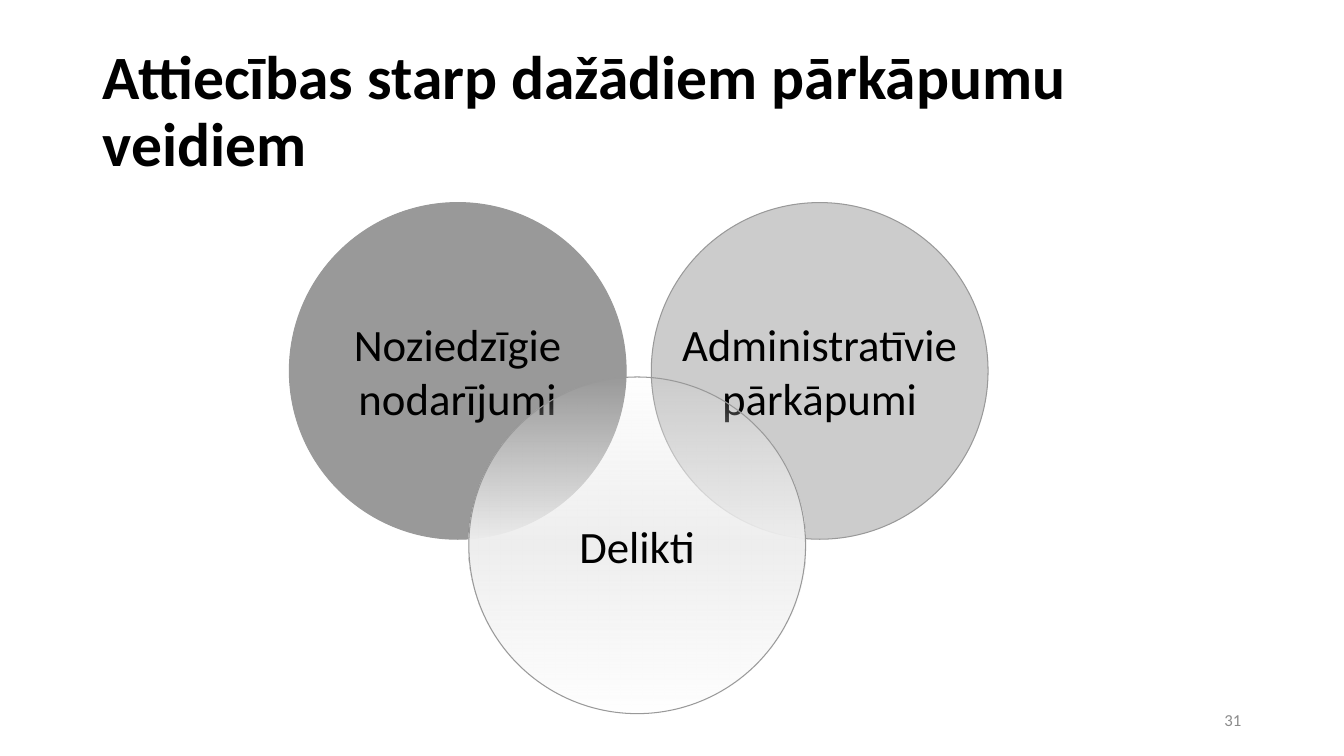
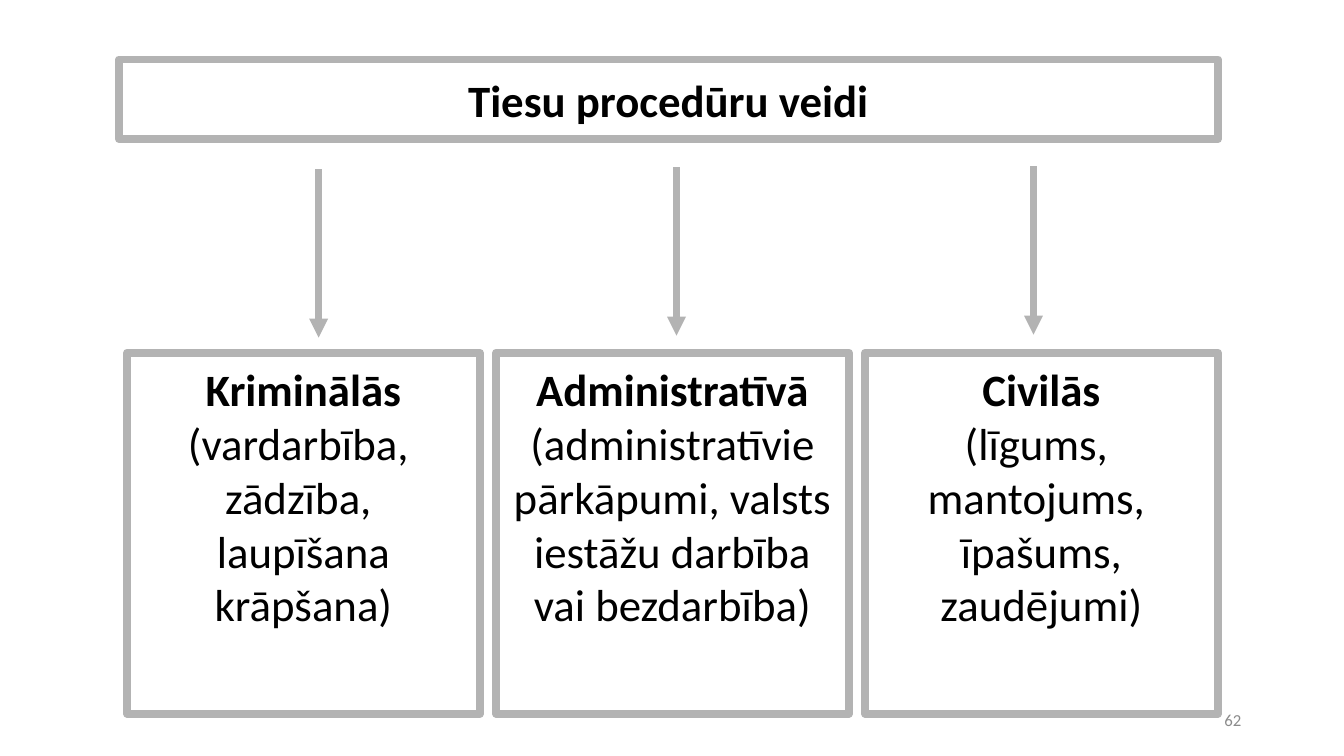
"""Builds two slides on kinds of offences and kinds of court procedure."""
from lxml.etree import SubElement
from pptx import Presentation
from pptx.dml.color import RGBColor
from pptx.enum.shapes import MSO_CONNECTOR as CONNECTOR, MSO_SHAPE as SHAPE
from pptx.enum.text import MSO_ANCHOR as ANCHOR, PP_ALIGN as ALIGN
from pptx.oxml.ns import qn
from pptx.util import Inches, Pt

BLACK, WHITE, NUMBER_GREY = "000000", "FFFFFF", "8B8B8B"
CIRCLE_EDGE, FRAME_GREY, GLOW = "999999", "B3B3B3", "EEEEEE"


def color(code):
    return RGBColor.from_string(code)


def write(shape, lines, size=32, ink=BLACK, bold_lines=0, align=ALIGN.CENTER,
          anchor=ANCHOR.MIDDLE, wrap=False, inset=(0.1, 0.05), spacing=None):
    frame = shape.text_frame
    side, top = map(Inches, inset)
    layout = {"word_wrap": wrap, "vertical_anchor": anchor, "margin_left": side,
              "margin_right": side, "margin_top": top, "margin_bottom": top}
    for key, value in layout.items():
        setattr(frame, key, value)
    for index, line in enumerate(lines):
        paragraph = frame.add_paragraph() if index else frame.paragraphs[0]
        paragraph.alignment = align
        paragraph.line_spacing = spacing
        run = paragraph.add_run()
        run.text = line
        style = {"name": "Calibri", "size": Pt(size), "bold": index < bold_lines}
        for key, value in style.items():
            setattr(run.font, key, value)
        run.font.color.rgb = color(ink)


deck = Presentation()
deck.slide_width, deck.slide_height = Inches(13.33), Inches(7.5)
offences, procedures = [deck.slides.add_slide(deck.slide_layouts[6]) for _ in range(2)]

for slide, page in ((offences, "31"), (procedures, "62")):
    slide.background.fill.solid()
    slide.background.fill.fore_color.rgb = color(WHITE)
    number = slide.shapes.add_textbox(Inches(9.42), Inches(6.95), Inches(2.99), Inches(0.39))
    write(number, [page], size=12, ink=NUMBER_GREY, align=ALIGN.RIGHT, wrap=True)

title = offences.shapes.add_textbox(Inches(0.92), Inches(0.4), Inches(11.49), Inches(1.44))
write(title, ["Attiecības starp dažādiem pārkāpumu veidiem"], size=44, bold_lines=1,
      align=ALIGN.LEFT, wrap=True, spacing=0.9)

circles = [
    (2.87, 2.01, "999999", ["Noziedzīgie", "nodarījumi"]),
    (6.46, 2.01, "CCCCCC", ["Administratīvie", "pārkāpumi"]),
    (4.65, 3.74, None, ["Delikti"]),
]
for left, top, tint, lines in circles:
    circle = offences.shapes.add_shape(SHAPE.OVAL, Inches(left), Inches(top),
                                       Inches(3.34), Inches(3.34))
    circle.shadow.inherit = False
    circle.line.color.rgb = color(CIRCLE_EDGE)
    circle.line.width = 0
    if tint:
        circle.fill.solid()
        circle.fill.fore_color.rgb = color(tint)
    else:
        circle.fill.gradient()
        circle.fill.gradient_angle = 270
        stops = circle._element.spPr.find(qn("a:gradFill")).find(qn("a:gsLst"))
        for stop in list(stops):
            stops.remove(stop)
        for position, alpha in ((0, 0), (50, 100), (100, 0)):
            stop = SubElement(stops, qn("a:gs"), pos=str(position * 1000))
            glow = SubElement(stop, qn("a:srgbClr"), val=GLOW)
            SubElement(glow, qn("a:alpha"), val=str(alpha * 1000))
    write(circle, lines)

kinds = [
    ["Kriminālās", "(vardarbība, ", "zādzība, ", "laupīšana", "krāpšana)"],
    ["Administratīvā", "(administratīvie", "pārkāpumi, valsts", "iestāžu darbība",
     "vai bezdarbība)"],
    ["Civilās", "(līgums, ", "mantojums, ", "īpašums,", "zaudējumi)"],
]
frames = [(1.18, 0.59, 10.9, 0.79, ANCHOR.MIDDLE, ["Tiesu procedūru veidi"])]
frames += [(1.26 + 3.66 * column, 3.5, 3.5, 3.58, ANCHOR.TOP, lines)
           for column, lines in enumerate(kinds)]
for left, top, width, height, anchor, lines in frames:
    box = procedures.shapes.add_shape(SHAPE.RECTANGLE, Inches(left), Inches(top),
                                      Inches(width), Inches(height))
    box.shadow.inherit = False
    box.fill.background()
    box.line.color.rgb = color(FRAME_GREY)
    box.line.width = Pt(5.67)
    write(box, lines, bold_lines=1, anchor=anchor, inset=(0.14, 0.09))

for x, top in ((3.16, 1.68), (6.71, 1.66), (10.25, 1.65)):
    arrow = procedures.shapes.add_connector(CONNECTOR.STRAIGHT, Inches(x), Inches(top),
                                            Inches(x), Inches(top + 1.67))
    arrow.line.color.rgb = color(FRAME_GREY)
    arrow.line.width = Pt(4.5)
    SubElement(arrow.line._get_or_add_ln(), qn("a:tailEnd"), type="triangle")
    SubElement(arrow._element.spPr, qn("a:effectLst"))

deck.save("out.pptx")
